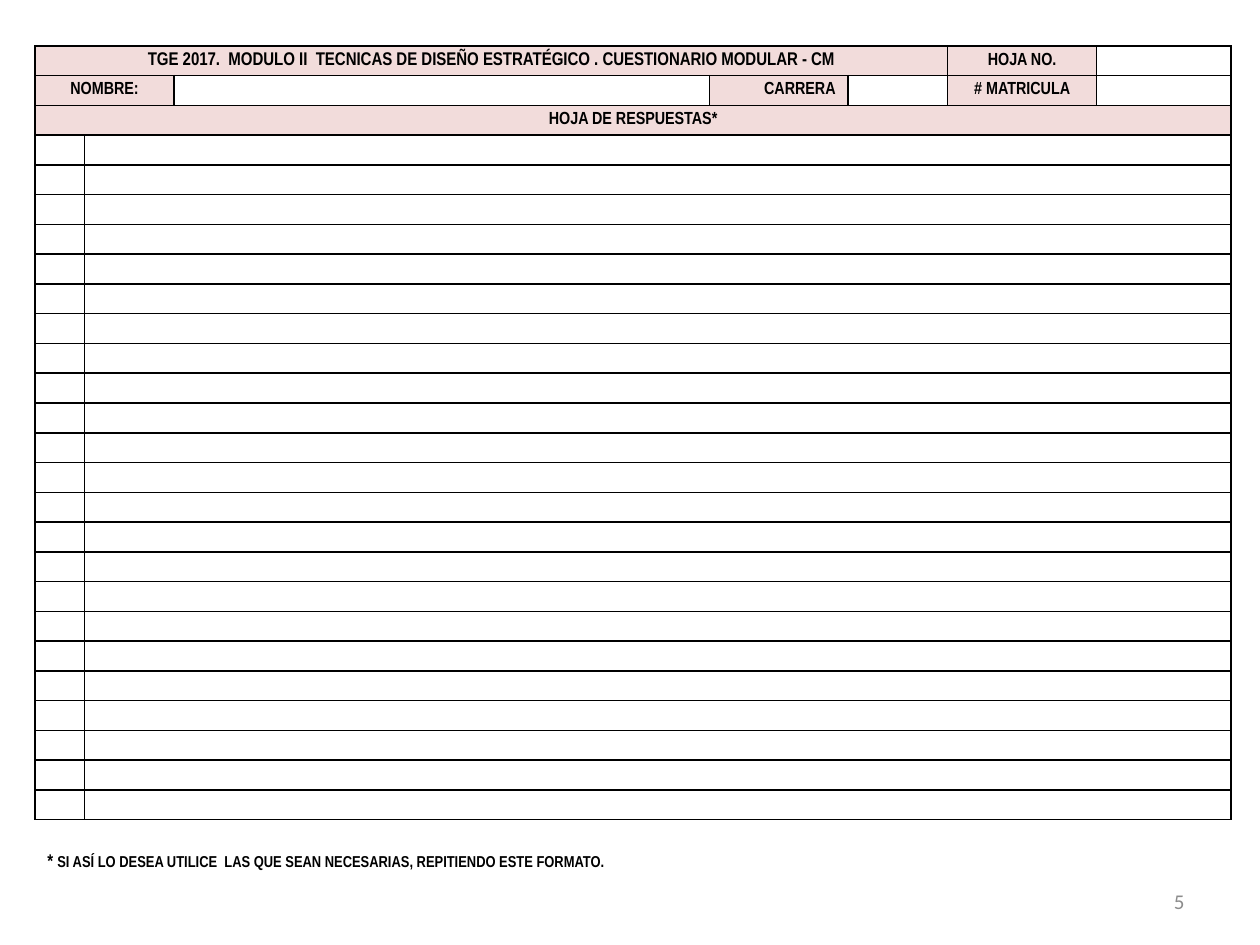
from dataclasses import dataclass

from lxml import etree
from pptx import Presentation
from pptx.dml.color import RGBColor
from pptx.enum.text import MSO_ANCHOR, PP_ALIGN
from pptx.oxml.ns import qn
from pptx.util import Pt

LEFT, CENTER, RIGHT = PP_ALIGN.LEFT, PP_ALIGN.CENTER, PP_ALIGN.RIGHT
TOP, MIDDLE = MSO_ANCHOR.TOP, MSO_ANCHOR.MIDDLE


@dataclass
class Theme:
    ink: str = "000000"
    label: str = "F2DCDB"
    blank: str = "FFFFFF"
    number: str = "8C8C8C"
    font: str = "Arial Narrow"
    number_font: str = "Calibri"
    heading: float = 10.5
    body: float = 10
    note: float = 9
    page: float = 12
    border: float = 1


class FormSlide:
    def __init__(self, s, theme):
        self.s, self.theme = s, theme

    def run(self, p, text, size, **overrides):
        style = {"size": Pt(size), "name": self.theme.font, "bold": True}
        style.update(overrides)
        color = style.pop("color", self.theme.ink)
        r = p.add_run()
        r.text = text
        for key, value in style.items():
            setattr(r.font, key, value)
        r.font.color.rgb = RGBColor.from_string(color)

    def text(self, box, runs, align=LEFT, anchor=TOP, **style):
        sp = self.s.shapes.add_textbox(*map(Pt, box))
        tf = sp.text_frame
        tf.word_wrap = True
        tf.vertical_anchor = anchor
        p = tf.paragraphs[0]
        p.alignment = align
        for text, size in runs:
            self.run(p, text, size, **style)

    def table(self, left, top, widths, row_height, row_count):
        frame = self.s.shapes.add_table(
            row_count, len(widths), Pt(left), Pt(top),
            Pt(sum(widths)), Pt(row_height * row_count))
        table = frame.table
        for column, width in zip(table.columns, widths):
            column.width = Pt(width)
        for row in table.rows:
            row.height = Pt(row_height)
            for cell in row.cells:
                self.format_cell(cell)
        return table

    def format_cell(self, cell):
        layout = {"margin_top": 0, "margin_bottom": 0, "vertical_anchor": MIDDLE}
        for key, value in layout.items():
            setattr(cell, key, value)
        # Borders come before the fill in the cell properties
        props = cell._tc.get_or_add_tcPr()
        for side in ("a:lnL", "a:lnR", "a:lnT", "a:lnB"):
            line = etree.SubElement(props, qn(side), w=str(Pt(self.theme.border)))
            fill = etree.SubElement(line, qn("a:solidFill"))
            etree.SubElement(fill, qn("a:srgbClr"), val=self.theme.ink)
        self.fill(cell, self.theme.blank)
        # Small type in empty cells keeps the rows low
        p = cell.text_frame.paragraphs[0]
        etree.SubElement(p._p, qn("a:endParaRPr"), sz=str(int(self.theme.body * 100)))

    def fill(self, cell, color):
        cell.fill.solid()
        cell.fill.fore_color.rgb = RGBColor.from_string(color)

    def label(self, cell, text, size, align=CENTER):
        self.fill(cell, self.theme.label)
        p = cell.text_frame.paragraphs[0]
        p.alignment = align
        p.space_before = Pt(3.6)
        self.run(p, text, size)


def main():
    prs = Presentation()
    prs.slide_width, prs.slide_height = Pt(720), Pt(540)
    theme = Theme()
    form = FormSlide(prs.slides.add_slide(prs.slide_layouts[6]), theme)

    # Page number
    form.text((516.24, 500.4, 167.76, 28.8), [("5", theme.page)], RIGHT, MIDDLE,
              name=theme.number_font, bold=False, color=theme.number)

    # Answer sheet: three heading rows, then numbered answer lines
    widths = [28.4, 51.1, 306, 79.2, 56.9, 85, 77]
    header_rows, answer_rows = 3, 23
    table = form.table(20, 26.2, widths, 17.02, header_rows + answer_rows)
    last = len(widths) - 1
    merges = [(0, 0, 4), (1, 0, 1), (2, 0, last)]
    merges += [(header_rows + i, 1, last) for i in range(answer_rows)]
    for row, first, end in merges:
        table.cell(row, first).merge(table.cell(row, end))

    labels = [
        (0, 0, "TGE 2017.  MODULO II  TECNICAS DE DISEÑO ESTRATÉGICO . "
               "CUESTIONARIO MODULAR - CM", theme.heading, CENTER),
        (0, 5, "HOJA NO.", theme.body, CENTER),
        (1, 0, "NOMBRE:", theme.body, CENTER),
        (1, 3, "CARRERA", theme.body, RIGHT),
        (1, 5, "# MATRICULA", theme.body, CENTER),
        (2, 0, "HOJA DE RESPUESTAS*", theme.body, CENTER),
    ]
    for row, column, text, size, align in labels:
        form.label(table.cell(row, column), text, size, align)

    # Footnote
    form.text((20, 481.7, 669, 20.9), [
        ("* ", theme.heading),
        ("SI ASÍ LO DESEA UTILICE  LAS QUE SEAN NECESARIAS, "
         "REPITIENDO ESTE FORMATO.", theme.note)])

    prs.save("out.pptx")


if __name__ == "__main__":
    main()
